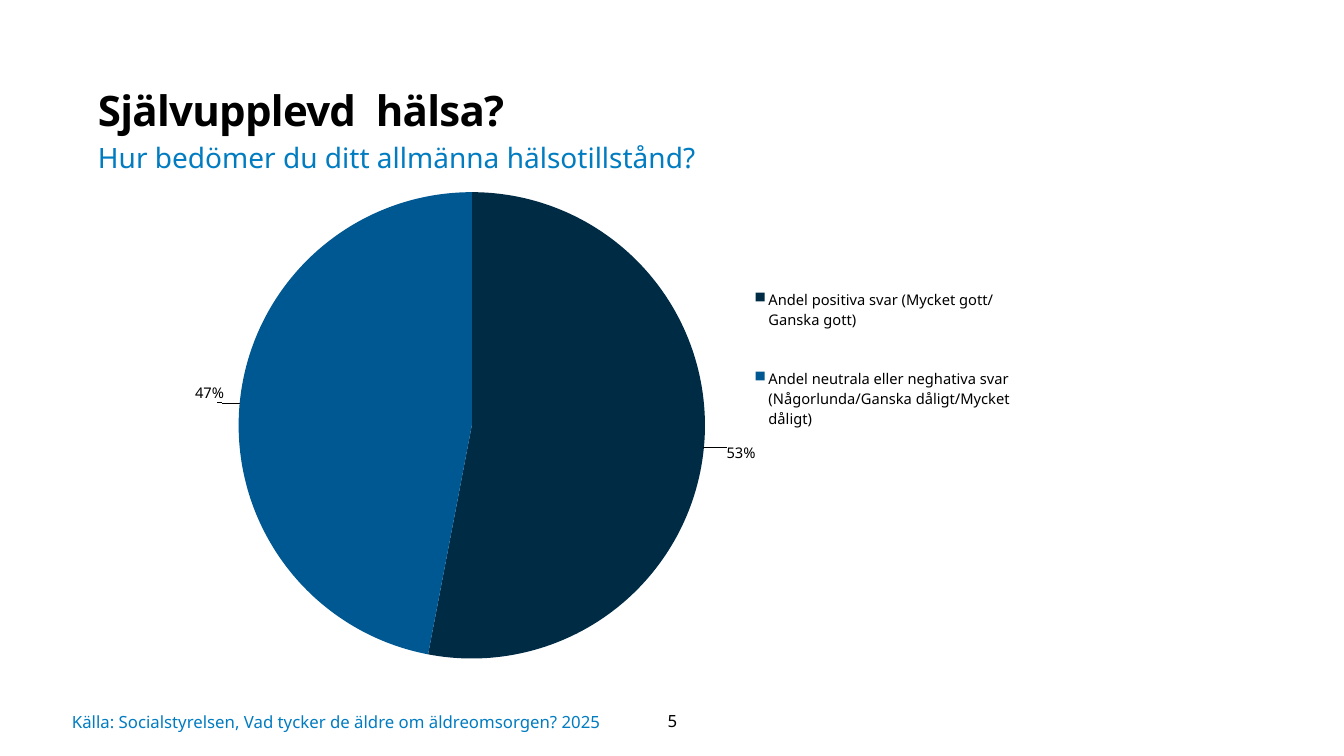
from lxml import etree
from pptx import Presentation
from pptx.chart.data import CategoryChartData
from pptx.dml.color import RGBColor
from pptx.enum.chart import XL_CHART_TYPE as ChartType
from pptx.enum.chart import XL_LABEL_POSITION as LabelPosition
from pptx.enum.chart import XL_LEGEND_POSITION as LegendPosition
from pptx.enum.text import MSO_ANCHOR as Anchor
from pptx.enum.text import PP_ALIGN as Align
from pptx.oxml import parse_xml
from pptx.oxml.ns import nsdecls, qn
from pptx.util import Pt

PX = 914400 / 100.8
FONT = "Noto Sans"
BLACK = RGBColor(0x00, 0x00, 0x00)
ACCENT = RGBColor(0x01, 0x7C, 0xC1)
NAVY = RGBColor(0x00, 0x2B, 0x45)
BLUE = RGBColor(0x00, 0x58, 0x92)


def add_text(box, text, size, color, margins, anchor=Anchor.TOP, align=Align.LEFT):
    frame = slide.shapes.add_textbox(*(round(v * PX) for v in box)).text_frame
    frame.word_wrap = True
    frame.vertical_anchor = anchor
    frame.margin_left, frame.margin_top, frame.margin_right, frame.margin_bottom = (
        round(v * PX) for v in margins
    )
    paragraph = frame.paragraphs[0]
    paragraph.text = text
    paragraph.alignment = align
    paragraph.font.name = FONT
    paragraph.font.size = Pt(size)
    paragraph.font.color.rgb = color
    return paragraph


def manual_layout(target, **fractions):
    layout = parse_xml(f"<c:layout {nsdecls('c')}><c:manualLayout/></c:layout>")
    for tag, value in fractions.items():
        etree.SubElement(layout[0], qn(f"c:{tag}")).set("val", str(value))
    for old in target.findall(qn("c:layout")):
        target.remove(old)
    return layout


prs = Presentation()
prs.slide_width = round(1344 * PX)
prs.slide_height = round(756 * PX)
slide = prs.slides.add_slide(prs.slide_layouts[6])

title = add_text((88, 80, 991, 55), "Självupplevd  hälsa?", 30, BLACK, (10, 0, 10, 5))
title.line_spacing = 1.1
title.font.bold = True
title.runs[0].font._element.set("spc", "-50")
add_text((88, 135, 794, 44), "Hur bedömer du ditt allmänna hälsotillstånd?", 20, ACCENT, (10, 5, 10, 5))

answers = CategoryChartData()
answers.categories = [
    "Andel positiva svar (Mycket gott/ Ganska gott)",
    "Andel neutrala eller neghativa svar (Någorlunda/Ganska dåligt/Mycket dåligt)",
]
answers.add_series("Series 1", (53, 47))
chart_box = (round(v * PX) for v in (195, 171, 839, 530))
chart = slide.shapes.add_chart(ChartType.PIE, *chart_box, answers).chart
chart.has_title = False
chart.font.name = FONT
chart.font.size = Pt(10)
chart.font.color.rgb = BLACK

pie = chart.plots[0]
pie.vary_by_categories = True
health = pie.series[0]
for index, color in enumerate((NAVY, BLUE)):
    fill = health.points[index].format.fill
    fill.solid()
    fill.fore_color.rgb = color

labels = health.data_labels
labels.show_percentage = True
labels.show_value = False
labels.number_format = "0%"
labels.number_format_is_linked = False
labels.position = LabelPosition.OUTSIDE_END
labels.font.name = FONT
labels.font.size = Pt(10.5)
labels.font.color.rgb = BLACK
for index, (dx, dy) in enumerate(((0.02, -0.01), (-0.02, 0))):
    label = parse_xml(
        f'<c:dLbl {nsdecls("c")}><c:idx val="{index}"/><c:dLblPos val="outEnd"/>'
        '<c:showLegendKey val="0"/><c:showVal val="0"/><c:showCatName val="0"/>'
        '<c:showSerName val="0"/><c:showPercent val="1"/><c:showBubbleSize val="0"/></c:dLbl>'
    )
    label.insert(1, manual_layout(label, x=dx, y=dy))
    labels._element.insert(index, label)

chart.has_legend = True
legend = chart.legend
legend.position = LegendPosition.RIGHT
legend.include_in_layout = False
legend.font.name = FONT
legend.font.size = Pt(10.5)
legend.font.color.rgb = BLACK
legend_xml = legend._element
legend_xml.insert(1, manual_layout(legend_xml, xMode="edge", yMode="edge", x=0.66, y=0.15, w=0.32, h=0.41))
plot_area = chart._chartSpace.chart.plotArea
plot_area.insert(0, manual_layout(
    plot_area, layoutTarget="inner", xMode="edge", yMode="edge", x=0.05, y=0.04, w=0.56, h=0.88
))

add_text((72, 701, 549, 42), "Källa: Socialstyrelsen, Vad tycker de äldre om äldreomsorgen? 2025",
         12, ACCENT, (0, 0, 0, 0), Anchor.MIDDLE)
add_text((621, 701, 103, 40), "5", 12, BLACK, (10, 5, 10, 5), Anchor.MIDDLE, Align.CENTER)

prs.save("out.pptx")
